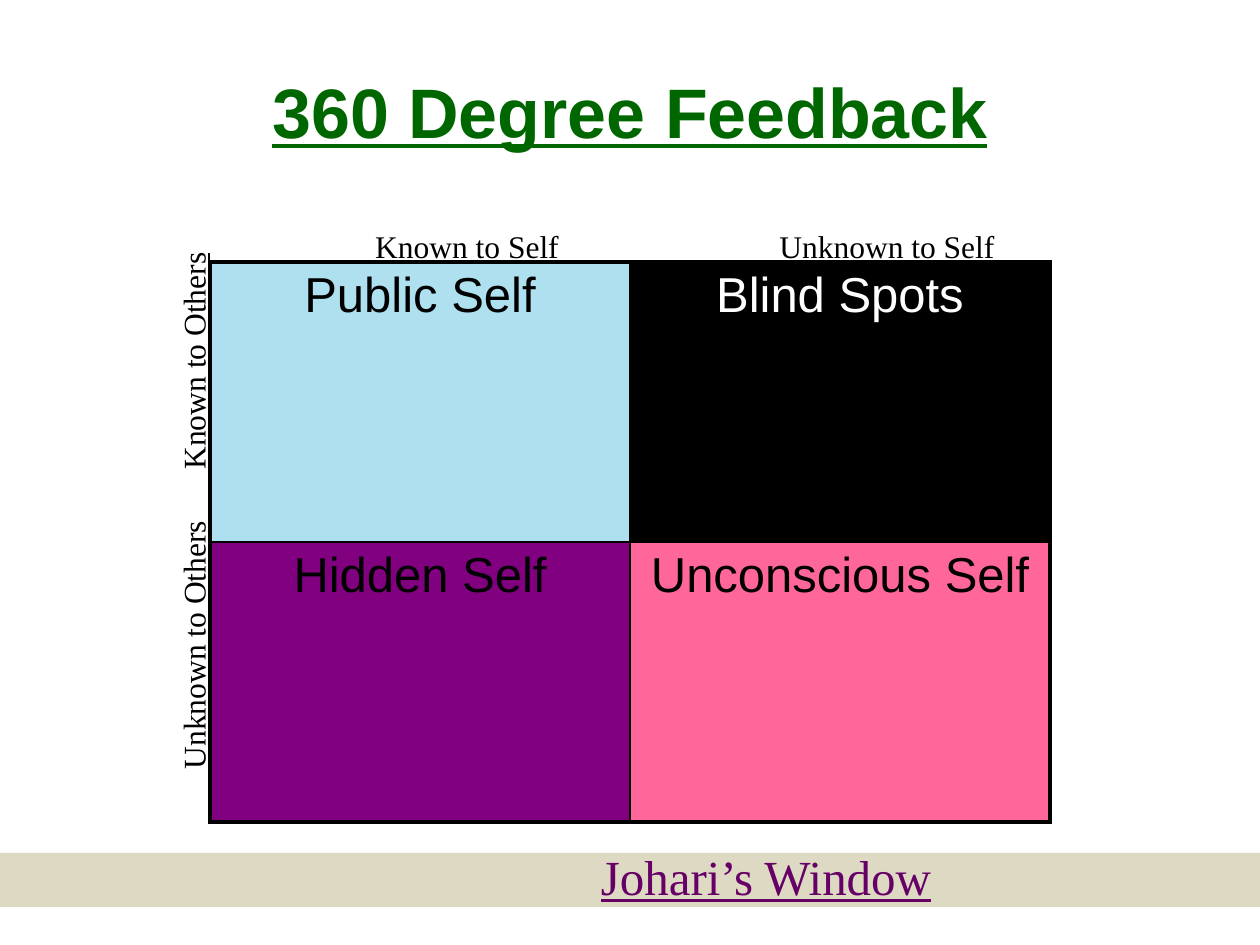
from dataclasses import dataclass
from typing import NamedTuple

from lxml.etree import SubElement
from pptx import Presentation
from pptx.dml.color import RGBColor as Rgb
from pptx.enum.shapes import MSO_SHAPE as Shape
from pptx.enum.text import MSO_ANCHOR as Anchor, MSO_AUTO_SIZE as Fit, PP_ALIGN as Align
from pptx.oxml.ns import qn
from pptx.util import Emu, Pt


class Box(NamedTuple):
    x: int
    y: int
    w: int
    h: int


@dataclass(frozen=True)
class Theme:
    sans: str = "Arial"
    serif: str = "Times New Roman"
    title: int = 40
    large: int = 28
    small: int = 18
    thick: float = 2.25
    thin: float = 1
    black: str = "000000"
    white: str = "FFFFFF"
    green: str = "006600"
    plum: str = "660066"
    sand: str = "DDD9C3"
    sky: str = "AFE0EF"
    purple: str = "800080"
    pink: str = "FF6699"


@dataclass(frozen=True)
class Pane:
    text: str
    fill: str
    ink: str


@dataclass(frozen=True)
class Label:
    text: str
    box: Box
    size: int
    ink: str
    turn: int = 0


THEME = Theme()
SCALE = 914400 / 126
GRID = Box(210, 262, 840, 560)
PANES = [
    [Pane("Public Self", THEME.sky, THEME.black),
     Pane("Blind Spots", THEME.black, THEME.white)],
    [Pane("Hidden Self", THEME.purple, THEME.black),
     Pane("Unconscious Self", THEME.pink, THEME.black)],
]
LABELS = [
    Label("Known to Self", Box(294, 221, 346, 50), THEME.small, THEME.black),
    Label("Unknown to Self", Box(714, 221, 346, 50), THEME.small, THEME.black),
    Label("Known to Others", Box(20, 336, 346, 50), THEME.small, THEME.black, 270),
    Label("Unknown to Others", Box(20, 620, 346, 50), THEME.small, THEME.black, 270),
    Label("Johari’s Window", Box(472, 840, 588, 72), THEME.large, THEME.plum),
]


def px(n: float) -> Emu:
    return Emu(round(n * SCALE))


def place(box: Box) -> list[Emu]:
    return [px(n) for n in box]


def write(frame, text: str, face: str, size: int, ink: str,
          bold: bool = False, under: bool = False) -> None:
    frame.text = text
    para = frame.paragraphs[0]
    para.alignment = Align.CENTER
    font = para.runs[0].font
    font.name, font.size, font.bold, font.underline = face, Pt(size), bold, under
    font.color.rgb = Rgb.from_string(ink)


def draw_title(slide, text: str) -> None:
    title = slide.shapes.title
    title.left, title.top, title.width, title.height = place(Box(63, 32, 1134, 157))
    write(title.text_frame, text, THEME.sans, THEME.title, THEME.green, True, True)
    title.text_frame.vertical_anchor = Anchor.MIDDLE


def draw_band(slide, box: Box) -> None:
    band = slide.shapes.add_shape(Shape.RECTANGLE, *place(box))
    band.shadow.inherit = False
    band.fill.solid()
    band.fill.fore_color.rgb = Rgb.from_string(THEME.sand)
    band.line.fill.background()


def draw_edge(cell, side: str, outer: bool) -> None:
    width = Pt(THEME.thick if outer else THEME.thin)
    line = SubElement(cell._tc.get_or_add_tcPr(), qn(f"a:ln{side}"), w=str(width))
    fill = SubElement(line, qn("a:solidFill"))
    SubElement(fill, qn("a:srgbClr"), val=THEME.black)


def draw_grid(slide, box: Box, panes: list[list[Pane]]) -> None:
    rows, cols = len(panes), len(panes[0])
    table = slide.shapes.add_table(rows, cols, *place(box)).table
    table.first_row = table.horz_banding = False
    for r, line in enumerate(panes):
        for c, pane in enumerate(line):
            cell = table.cell(r, c)
            edges = {"L": c == 0, "R": c == cols - 1, "T": r == 0, "B": r == rows - 1}
            for side, outer in edges.items():
                draw_edge(cell, side, outer)
            cell.fill.solid()
            cell.fill.fore_color.rgb = Rgb.from_string(pane.fill)
            write(cell.text_frame, pane.text, THEME.sans, THEME.large, pane.ink)


def draw_label(slide, label: Label) -> None:
    shape = slide.shapes.add_textbox(*place(label.box))
    shape.rotation = label.turn
    frame = shape.text_frame
    frame.word_wrap = True
    frame.auto_size = Fit.SHAPE_TO_FIT_TEXT
    write(frame, label.text, THEME.serif, label.size, label.ink, under=True)


def main() -> None:
    deck = Presentation()
    deck.slide_width, deck.slide_height = px(1260), px(945)
    slide = deck.slides.add_slide(deck.slide_layouts[5])
    draw_band(slide, Box(0, 853, 1260, 54))
    draw_title(slide, "360 Degree Feedback")
    draw_grid(slide, GRID, PANES)
    for label in LABELS:
        draw_label(slide, label)
    deck.save("out.pptx")


if __name__ == "__main__":
    main()
